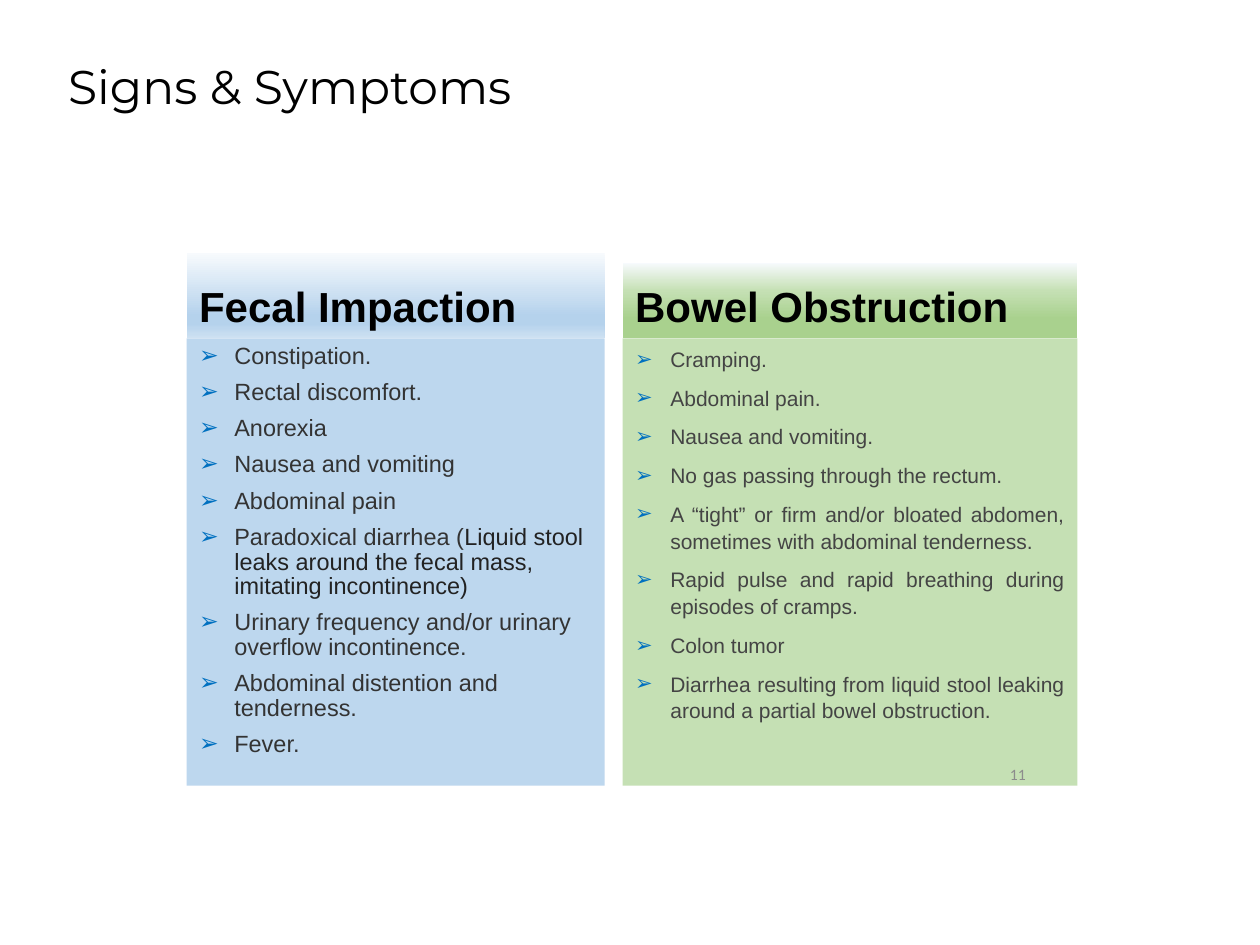
from lxml.etree import SubElement
from pptx import Presentation
from pptx.dml.color import RGBColor
from pptx.enum.text import MSO_ANCHOR as Anchor, MSO_AUTO_SIZE as AutoSize, PP_ALIGN as Align
from pptx.oxml.ns import qn
from pptx.util import Cm, Pt

TITLE = "Signs & Symptoms"
PAGE_NUMBER = "11"
BODY_TOP, BODY_HEIGHT = 6.82, 9.02
INDENT = 0.71
BULLET, BULLET_COLOR = "➢", "0070C0"

COLUMNS = [
    {
        "heading": "Fecal Impaction",
        "left": 3.76, "width": 8.43, "heading_height": 1.72,
        "gradient": [(0, "F7FAFD"), (74, "B5D2EC"), (83, "B5D2EC"), (100, "CEE1F2")],
        "fill": "BDD7EE", "size": 13.4, "color": "333333",
        "format": {"line_spacing": 0.87, "alignment": Align.LEFT},
        "items": [
            "Constipation.",
            "Rectal discomfort.",
            "Anorexia",
            "Nausea and vomiting",
            "Abdominal pain",
            [("Paradoxical diarrhea (", "333333"),
             ("Liquid stool leaks around the fecal mass, imitating incontinence)", "222222")],
            "Urinary frequency and/or urinary overflow incontinence.",
            "Abdominal distention and tenderness.",
            "Fever.",
        ],
    },
    {
        "heading": "Bowel Obstruction",
        "left": 12.55, "width": 9.17, "heading_height": 1.52,
        "gradient": [(0, "F7FAFD"), (37, "C5E0B4"), (74, "A9D18E"), (100, "A9D18E")],
        "fill": "C5E0B4", "size": 12, "color": "444444",
        "format": {"line_spacing": 1.07, "alignment": Align.JUSTIFY},
        "items": [
            "Cramping.",
            "Abdominal pain.",
            "Nausea and vomiting.",
            "No gas passing through the rectum.",
            "A “tight” or firm and/or bloated abdomen, sometimes with abdominal tenderness.",
            "Rapid pulse and rapid breathing during episodes of cramps.",
            "Colon tumor",
            "Diarrhea resulting from liquid stool leaking around a partial bowel obstruction.",
        ],
    },
]


def rgb(color):
    return RGBColor.from_string(color)


def set_values(target, values):
    for name, value in values.items():
        setattr(target, name, value)


def place(shape, left, top, width, height, anchor):
    set_values(shape, {"left": Cm(left), "top": Cm(top),
                       "width": Cm(width), "height": Cm(height)})
    set_values(shape.text_frame, {"word_wrap": True, "auto_size": AutoSize.NONE,
                                  "vertical_anchor": anchor})


def add_run(paragraph, text, size, color, font="Arial", bold=False):
    run = paragraph.add_run()
    run.text = text
    set_values(run.font, {"name": font, "size": Pt(size), "bold": bold})
    run.font.color.rgb = rgb(color)


def fill_downward(shape, stops):
    """Fill with a top-to-bottom gradient that may have more than two stops."""
    shape.fill.gradient()
    shape.fill.gradient_angle = 270
    stop_list = next(shape.element.iter(qn("a:gsLst")))
    for stop in list(stop_list):
        stop_list.remove(stop)
    for position, color in stops:
        stop = SubElement(stop_list, qn("a:gs"), pos=str(position * 1000))
        SubElement(stop, qn("a:srgbClr"), val=color)


def add_bullet(paragraph):
    properties = paragraph._p.get_or_add_pPr()
    properties.set("marL", str(Cm(INDENT)))
    properties.set("indent", str(-Cm(INDENT)))
    bullet_color = SubElement(properties, qn("a:buClr"))
    SubElement(bullet_color, qn("a:srgbClr"), val=BULLET_COLOR)
    SubElement(properties, qn("a:buFont"), typeface="Arial")
    SubElement(properties, qn("a:buChar"), char=BULLET)


def write_list(frame, column):
    for index, item in enumerate(column["items"]):
        paragraph = frame.add_paragraph() if index else frame.paragraphs[0]
        add_bullet(paragraph)
        set_values(paragraph, {"space_before": Pt(4.5 if index else 0),
                               "space_after": Pt(2.2), **column["format"]})
        runs = [(item, column["color"])] if isinstance(item, str) else item
        for text, color in runs:
            add_run(paragraph, text, column["size"], color)


def add_column(heading, body, column):
    left, width, height = column["left"], column["width"], column["heading_height"]
    place(heading, left, BODY_TOP - height, width, height, Anchor.BOTTOM)
    fill_downward(heading, column["gradient"])
    paragraph = heading.text_frame.paragraphs[0]
    set_values(paragraph, {"line_spacing": 0.9, "space_before": Pt(0)})
    add_run(paragraph, column["heading"], 24, "000000", bold=True)

    place(body, left, BODY_TOP, width, BODY_HEIGHT, Anchor.TOP)
    body.fill.solid()
    body.fill.fore_color.rgb = rgb(column["fill"])
    write_list(body.text_frame, column)


def main():
    presentation = Presentation()
    set_values(presentation, {"slide_width": Cm(25.4), "slide_height": Cm(19.05)})
    comparison_layout = presentation.slide_layouts[4]
    slide = presentation.slides.add_slide(comparison_layout)
    title, *boxes = slide.placeholders

    place(title, 1.12, 0.56, 16.97, 2.46, Anchor.MIDDLE)
    paragraph = title.text_frame.paragraphs[0]
    set_values(paragraph, {"alignment": Align.LEFT, "line_spacing": 0.9})
    add_run(paragraph, TITLE, 27, "000000", "Montserrat")

    for heading, body, column in zip(boxes[::2], boxes[1::2], COLUMNS):
        add_column(heading, body, column)

    number = slide.shapes.add_textbox(0, 0, 0, 0)
    place(number, 11.81, 14.83, 9.12, 1.55, Anchor.MIDDLE)
    paragraph = number.text_frame.paragraphs[0]
    paragraph.alignment = Align.RIGHT
    add_run(paragraph, PAGE_NUMBER, 9, "8C8C8C", "Calibri")

    presentation.save("out.pptx")


if __name__ == "__main__":
    main()
